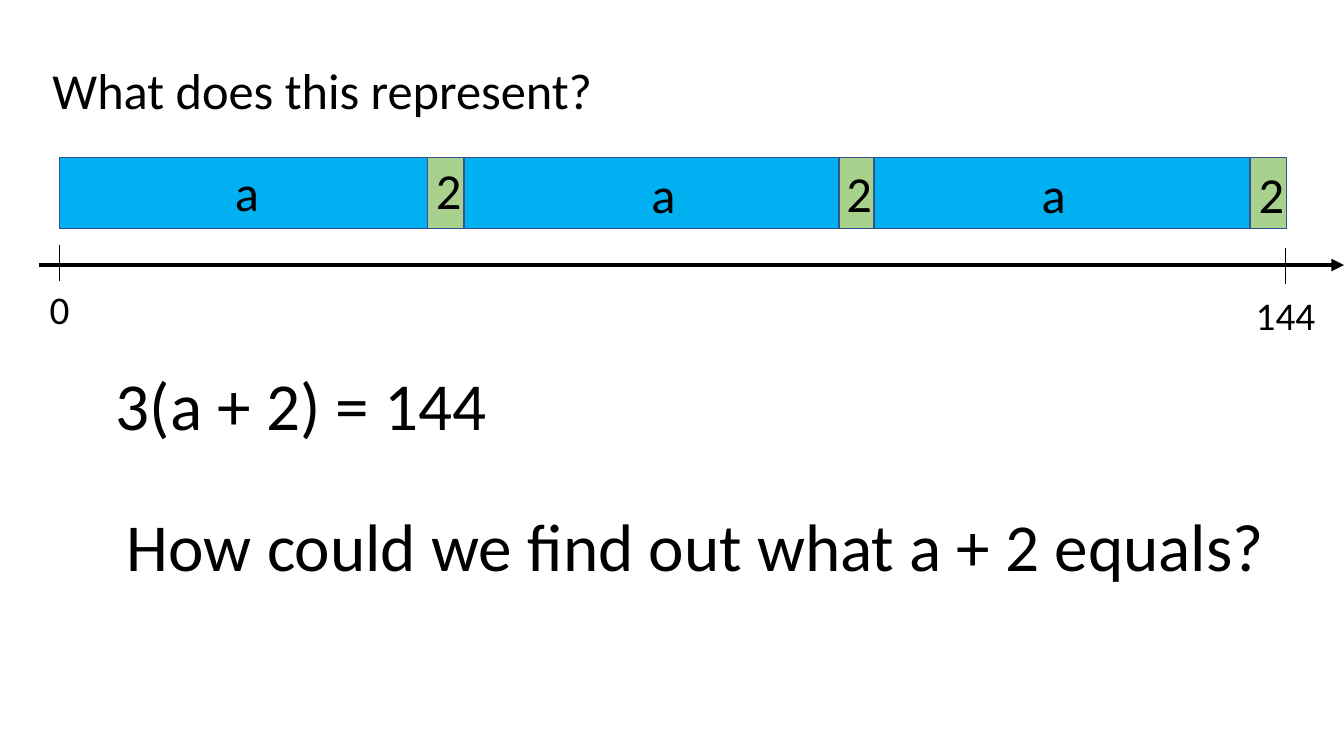
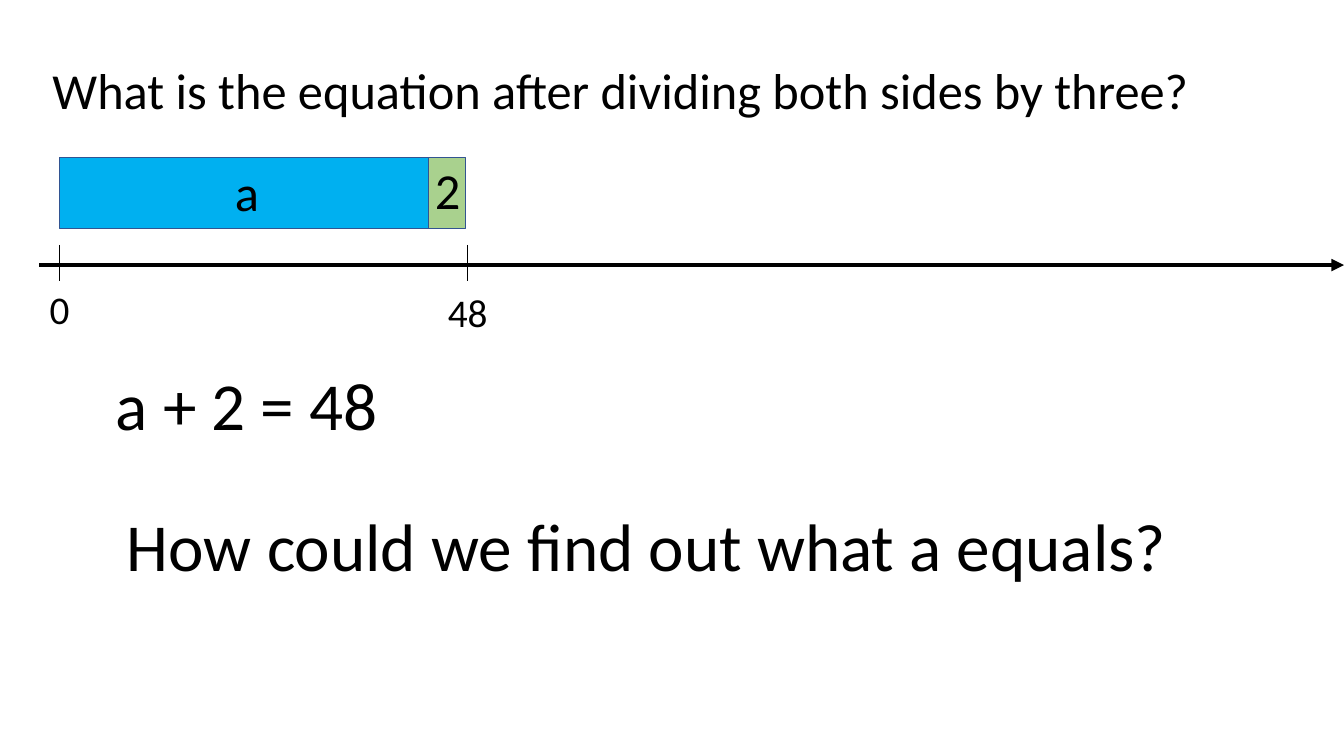
from lxml.etree import SubElement
from pptx import Presentation
from pptx.dml.color import RGBColor
from pptx.enum.shapes import MSO_CONNECTOR, MSO_SHAPE
from pptx.enum.text import MSO_ANCHOR, MSO_AUTO_SIZE, PP_ALIGN
from pptx.oxml.ns import qn
from pptx.util import Inches, Pt

COLOURS = {
    "text": "000000",
    "axis": "000000",
    "unknown": "00B0F0",
    "constant": "A9D18E",
    "outline": "325491",
}
FONT = "Calibri"
BAR_TOP, BAR_HEIGHT = 1.56, 0.71
AXIS_LEFT, AXIS_RIGHT, AXIS_Y = 0.39, 13.33, 2.63
TICK_LENGTH = 0.36


def colour(key):
    return RGBColor.from_string(COLOURS[key])


def write(frame, text, size=36, align=PP_ALIGN.LEFT, fit=MSO_AUTO_SIZE.SHAPE_TO_FIT_TEXT):
    frame.word_wrap = True
    frame.auto_size = fit
    frame.vertical_anchor = MSO_ANCHOR.TOP
    paragraph = frame.paragraphs[0]
    paragraph.alignment = align
    run = paragraph.add_run()
    run.text = text
    run.font.name = FONT
    run.font.size = Pt(size)
    run.font.color.rgb = colour("text")


class BarModelDeck:
    def __init__(self):
        self.deck = Presentation()
        self.deck.slide_width = Inches(13.33)
        self.deck.slide_height = Inches(7.5)
        self.slide = None

    def start(self, question):
        self.slide = self.deck.slides.add_slide(self.deck.slide_layouts[5])
        title = self.slide.shapes.title
        title.left, title.top = Inches(0.42), Inches(0.54)
        title.width, title.height = Inches(12.32), Inches(0.71)
        write(title.text_frame, question, fit=MSO_AUTO_SIZE.NONE)

    def label(self, text, left, top, width, height, parent=None, **style):
        shapes = (parent or self.slide).shapes
        box = shapes.add_textbox(Inches(left), Inches(top), Inches(width), Inches(height))
        write(box.text_frame, text, **style)

    def block(self, group, left, width, fill):
        block = group.shapes.add_shape(
            MSO_SHAPE.RECTANGLE, Inches(left), Inches(BAR_TOP), Inches(width), Inches(BAR_HEIGHT))
        block.shadow.inherit = False
        block.fill.solid()
        block.fill.fore_color.rgb = colour(fill)
        block.line.color.rgb = colour("outline")
        block.line.width = Pt(1)

    def line(self, x1, y1, x2, y2, weight, parent=None, arrow=False):
        line = (parent or self.slide).shapes.add_connector(
            MSO_CONNECTOR.STRAIGHT, Inches(x1), Inches(y1), Inches(x2), Inches(y2))
        line.line.color.rgb = colour("axis")
        line.line.width = Pt(weight)
        if arrow:
            SubElement(line.line._get_or_add_ln(), qn("a:tailEnd"), type="triangle")
        SubElement(line._element.spPr, qn("a:effectLst"))

    def bar(self, left, split, right, a_label, two_label):
        group = self.slide.shapes.add_group_shape()
        self.block(group, split, right - split, "constant")
        self.block(group, left, split - left, "unknown")
        for text, width, (centre, top) in (("2", 0.41, two_label), ("a", 0.62, a_label)):
            self.label(text, centre - width / 2, top, width, BAR_HEIGHT,
                       parent=group, align=PP_ALIGN.CENTER)

    def axis(self):
        self.line(AXIS_LEFT, AXIS_Y, AXIS_RIGHT, AXIS_Y, 3, arrow=True)

    def tick(self, value, x, top, label_top, label_width=1.33):
        group = self.slide.shapes.add_group_shape()
        self.line(x, top, x, top + TICK_LENGTH, 0.5, parent=group)
        self.label(value, x - label_width / 2, label_top, label_width, 0.57,
                   parent=group, size=28, align=PP_ALIGN.CENTER)

    def build(self, question, bars, end_tick, equation, follow_up):
        self.start(question)
        for bar in bars:
            self.bar(*bar)
        self.axis()
        self.tick("0", 0.59, 2.43, 2.78, label_width=0.61)
        self.tick(*end_tick)
        self.label(equation, 1.05, 3.56, 5.83, 0.91, size=48)
        self.label(follow_up, 1.16, 4.95, 11.9, 0.91, size=48)


def main():
    lesson = BarModelDeck()
    lesson.build(
        "What does this represent?",
        [
            (0.59, 4.24, 4.6, (2.45, 1.55), (4.43, 1.53)),
            (4.61, 8.32, 8.67, (6.58, 1.57), (8.5, 1.56)),
            (8.67, 12.4, 12.76, (10.45, 1.57), (12.59, 1.57)),
        ],
        ("144", 12.75, 2.46, 2.84),
        "3(a + 2) = 144",
        "How could we find out what a + 2 equals?",
    )
    lesson.build(
        "What is the equation after dividing both sides by three?",
        [(0.59, 4.25, 4.62, (2.45, 1.55), (4.42, 1.53))],
        ("48", 4.64, 2.43, 2.81),
        "a + 2 = 48",
        "How could we find out what a equals?",
    )
    lesson.deck.save("out.pptx")


if __name__ == "__main__":
    main()
